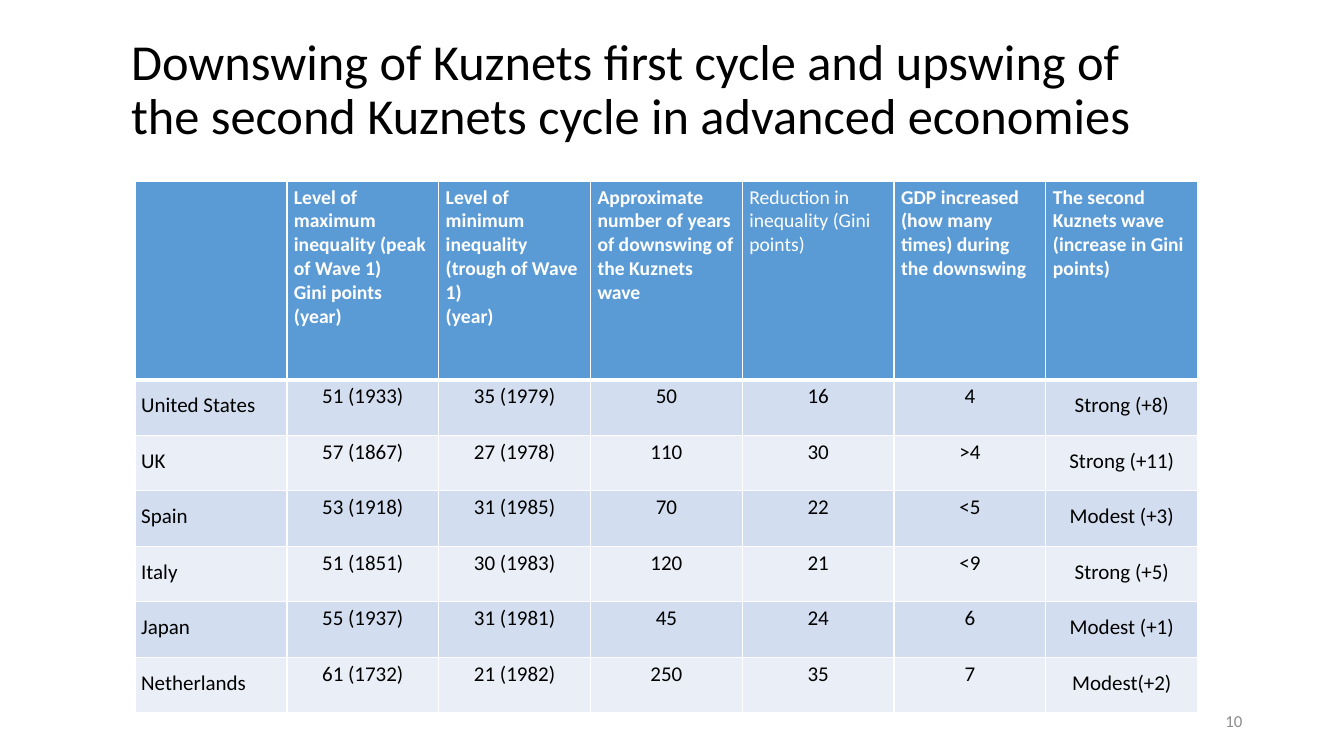
from lxml.etree import SubElement
from pptx import Presentation
from pptx.dml.color import RGBColor
from pptx.enum.text import MSO_ANCHOR, PP_ALIGN
from pptx.oxml.ns import qn
from pptx.util import Inches, Pt

COLORS = {
    "text": "000000",
    "number": "8C8C8C",
    "white": "FFFFFF",
    "header": "5B9BD5",
    "odd": "D2DEEF",
    "even": "EAEFF7",
}
HEADERS = [
    "",
    "Level of maximum inequality (peak of Wave 1)\nGini points (year)",
    "Level of minimum inequality (trough of Wave 1)\n(year)",
    "Approximate number of years of downswing of the Kuznets wave",
    "Reduction in inequality (Gini points)",
    "GDP increased (how many times) during the downswing",
    "The second Kuznets wave (increase in Gini points)",
]
COUNTRIES = [
    ["United States", "51 (1933)", "35 (1979)", "50", "16", "4", "Strong (+8)"],
    ["UK", "57 (1867)", "27 (1978)", "110", "30", ">4", "Strong (+11)"],
    ["Spain", "53 (1918)", "31 (1985)", "70", "22", "<5", "Modest (+3)"],
    ["Italy", "51 (1851)", "30 (1983)", "120", "21", "<9", "Strong (+5)"],
    ["Japan", "55 (1937)", "31 (1981)", "45", "24", "6", "Modest (+1)"],
    ["Netherlands", "61 (1732)", "21 (1982)", "250", "35", "7", "Modest(+2)"],
]
REDUCTION_COLUMN = 4
EDGE_COLUMNS = (0, len(HEADERS) - 1)


class SlideBuilder:
    """Holds the font, the colours and the current slide."""

    def __init__(self, page, font, colors):
        """Keep the page and its style."""
        self.page = page
        self.font = font
        self.colors = colors

    def color(self, name):
        """Return a named colour."""
        return RGBColor.from_string(self.colors[name])

    def style(self, frame, size, color, bold=False, align=PP_ALIGN.LEFT, spacing=1.0):
        """Format every paragraph of a text frame."""
        for para in frame.paragraphs:
            para.font.name = self.font
            para.font.size = Pt(size)
            para.font.bold = bold
            para.font.color.rgb = self.color(color)
            para.alignment = align
            para.line_spacing = spacing

    def place(self, shape, left, top, width, height):
        """Set the position and size of a shape."""
        shape.left, shape.top = Inches(left), Inches(top)
        shape.width, shape.height = Inches(width), Inches(height)

    def title(self, text, *bounds):
        """Fill the title placeholder."""
        title = self.page.shapes.title
        self.place(title, *bounds)
        title.text_frame.text = text
        title.text_frame.vertical_anchor = MSO_ANCHOR.MIDDLE
        self.style(title.text_frame, 36, "text", spacing=0.9)

    def page_number(self, text, *bounds):
        """Add the right-aligned slide number."""
        box = self.page.shapes.add_textbox(*map(Inches, bounds))
        frame = box.text_frame
        frame.word_wrap = True
        frame.vertical_anchor = MSO_ANCHOR.MIDDLE
        frame.text = text
        self.style(frame, 12, "number", align=PP_ALIGN.RIGHT)

    def borders(self, cell, bottom):
        """Draw white borders around a table cell."""
        properties = cell._tc.get_or_add_tcPr()
        for side, width in (("L", 1), ("R", 1), ("T", 1), ("B", bottom)):
            line = SubElement(properties, qn(f"a:ln{side}"), w=str(Pt(width)))
            fill = SubElement(line, qn("a:solidFill"))
            SubElement(fill, qn("a:srgbClr"), val=self.colors["white"])

    def cell(self, cell, text, fill, margins, bottom=1, **style):
        """Fill and format one table cell."""
        self.borders(cell, bottom)
        cell.fill.solid()
        cell.fill.fore_color.rgb = self.color(fill)
        side, edge = map(Inches, margins)
        cell.margin_left = cell.margin_right = side
        cell.margin_top = cell.margin_bottom = edge
        cell.text = text
        self.style(cell.text_frame, **style)

    def table(self, headers, rows, left, top, width, header_height, row_height):
        """Add the table with a header row and banded country rows."""
        height = header_height + row_height * len(rows)
        table = self.page.shapes.add_table(
            len(rows) + 1, len(headers), *map(Inches, (left, top, width, height))
        ).table
        for row in table.rows:
            row.height = Inches(row_height)
        table.rows[0].height = Inches(header_height)
        for column, text in enumerate(headers):
            self.cell(table.cell(0, column), text, "header", (0.07, 0.04), bottom=3,
                      size=14, color="white", bold=column != REDUCTION_COLUMN)
        for number, values in enumerate(rows, 1):
            band = "odd" if number % 2 else "even"
            for column, text in enumerate(values):
                at_edge = column in EDGE_COLUMNS
                self.cell(table.cell(number, column), text, band,
                          (0.06, 0) if at_edge else (0.07, 0.04),
                          size=15, color="text",
                          align=PP_ALIGN.CENTER if column else PP_ALIGN.LEFT,
                          spacing=1.5 if at_edge else 1.0)


def main():
    """Build and save the slide."""
    deck = Presentation()
    deck.slide_width, deck.slide_height = Inches(13.33), Inches(7.5)
    page = deck.slides.add_slide(deck.slide_layouts.get_by_name("Title Only"))
    builder = SlideBuilder(page, "Calibri", COLORS)
    builder.title("Downswing of Kuznets first cycle and upswing of the second "
                  "Kuznets cycle in advanced economies", 1.2, 0.27, 10.51, 1.27)
    builder.table(HEADERS, COUNTRIES, 1.34, 1.8, 10.54, 1.97, 0.55)
    builder.page_number("10", 9.42, 6.95, 3, 0.4)
    deck.save("out.pptx")


if __name__ == "__main__":
    main()
